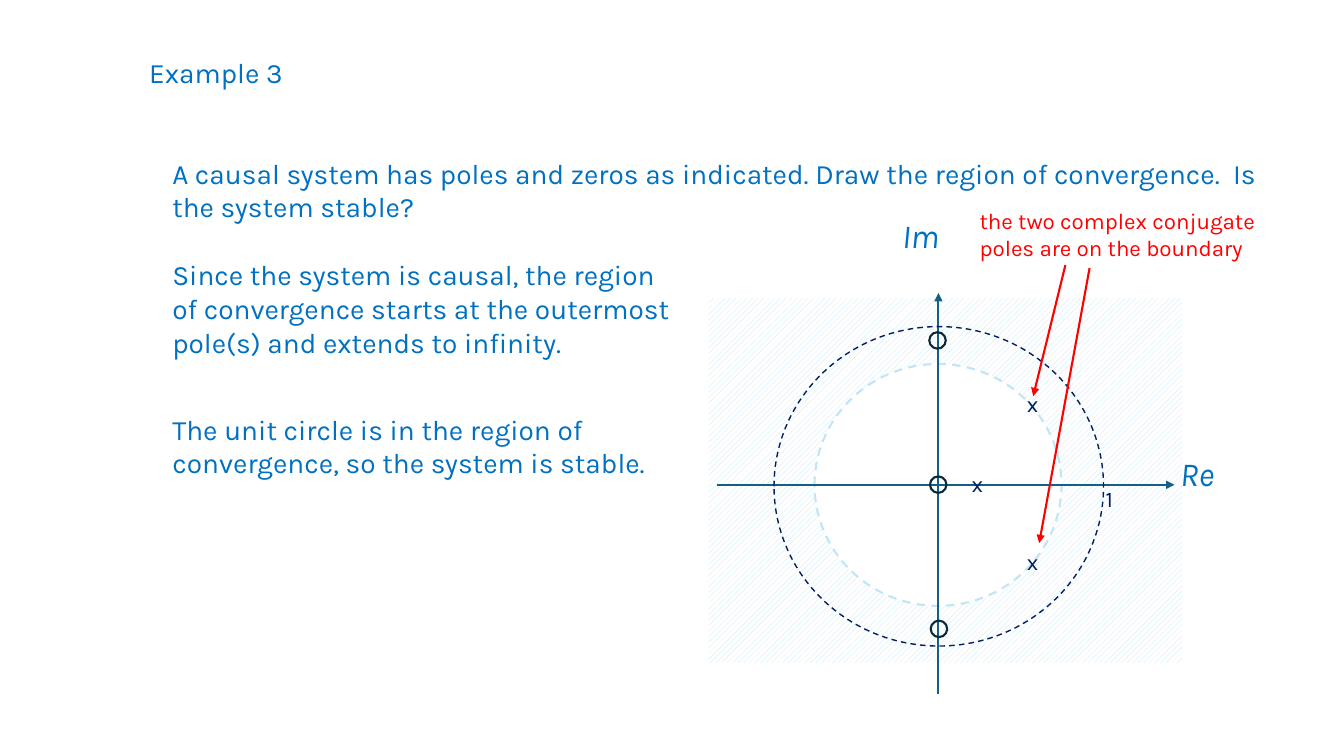
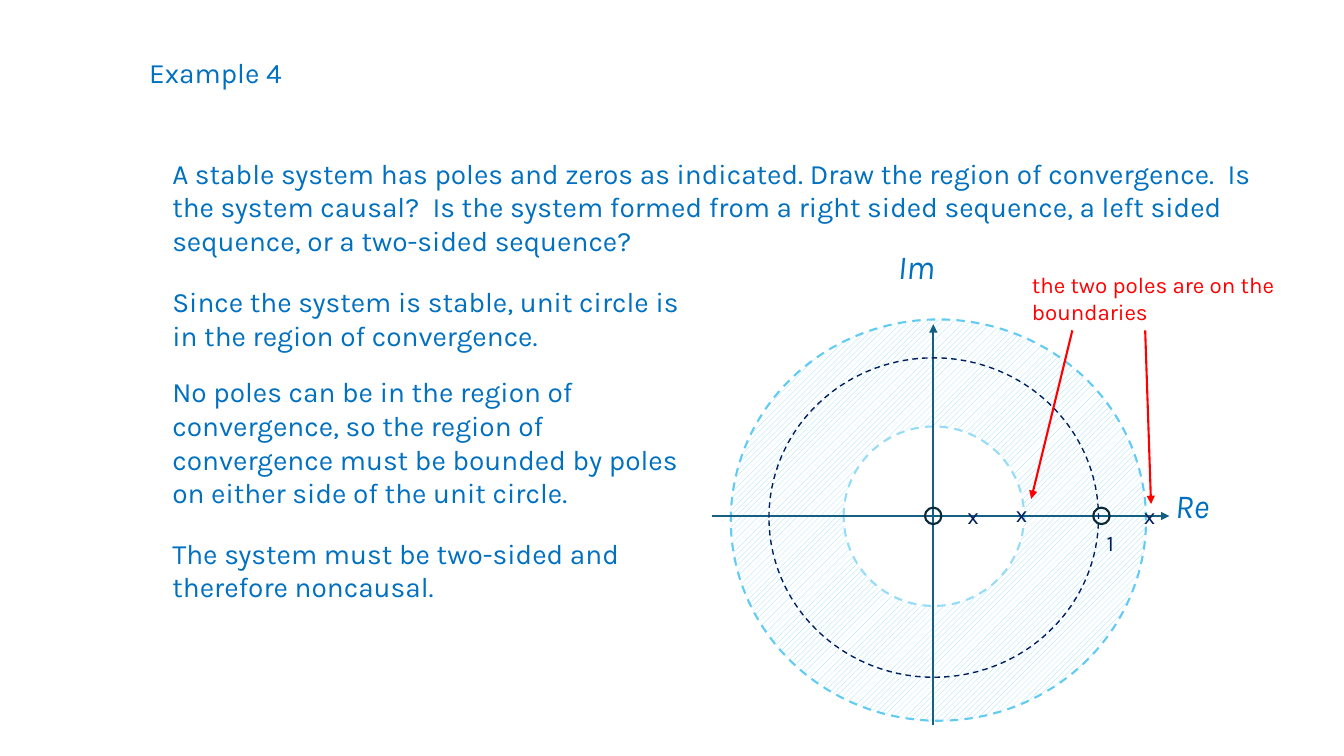
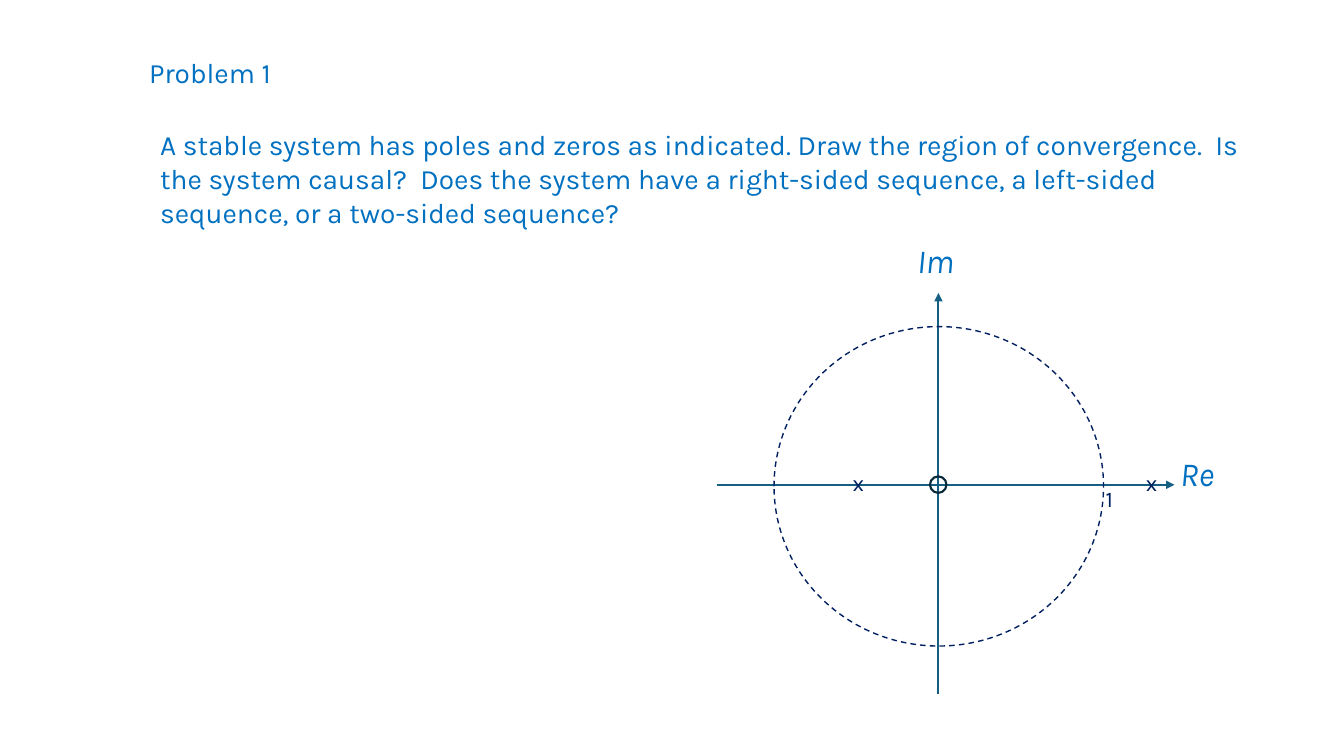
from dataclasses import dataclass
from typing import NamedTuple, Optional

from lxml.etree import SubElement
from pptx import Presentation
from pptx.dml.color import RGBColor as RGB
from pptx.enum.dml import MSO_LINE_DASH_STYLE as Dash, MSO_PATTERN_TYPE as Pattern
from pptx.enum.shapes import MSO_CONNECTOR_TYPE as Connector, MSO_SHAPE as Shape
from pptx.enum.text import MSO_AUTO_SIZE as AutoSize
from pptx.oxml.ns import qn
from pptx.slide import Slide as PptxSlide
from pptx.util import Pt


@dataclass(frozen=True)
class Theme:
    font: str = "Karla"
    white: RGB = RGB(0xFF, 0xFF, 0xFF)
    text: RGB = RGB(0x00, 0x70, 0xC0)
    navy: RGB = RGB(0x00, 0x20, 0x60)
    axis: RGB = RGB(0x15, 0x60, 0x82)
    zero: RGB = RGB(0x09, 0x2A, 0x39)
    remark: RGB = RGB(0xFF, 0x00, 0x00)
    pale: RGB = RGB(0xC1, 0xE5, 0xF5)
    light: RGB = RGB(0x96, 0xDC, 0xF8)
    sky: RGB = RGB(0x61, 0xCB, 0xF4)
    body_size: float = 20
    axis_size: float = 24
    small_size: float = 16
    thin: float = 1
    thick: float = 1.5


T = Theme()


class Point(NamedTuple):
    x: float
    y: float


class Box(NamedTuple):
    x: float
    y: float
    w: float
    h: float


class Note(NamedTuple):
    text: str
    box: Box
    size: float = T.body_size
    color: RGB = T.text


class Arrow(NamedTuple):
    start: Point
    end: Point


class Region(NamedTuple):
    shape: Shape
    box: Box
    fill: RGB
    hatched: bool = False
    line: Optional[RGB] = None


@dataclass(frozen=True)
class Plane:
    origin: Point
    im_label: Point
    one_label: Point
    poles: tuple[Point, ...]
    zeros: tuple[Point, ...]


@dataclass(frozen=True)
class Page:
    title: str
    notes: tuple[Note, ...]
    plane: Plane
    regions: tuple[Region, ...] = ()
    arrows: tuple[Arrow, ...] = ()


def apply(target: object, values: dict) -> None:
    for name, value in values.items():
        setattr(target, name, value)


def pts(*values: float) -> list:
    return [Pt(v) for v in values]


def add_text(s: PptxSlide, note: Note, italic: bool = False) -> None:
    tf = s.shapes.add_textbox(*pts(*note.box)).text_frame
    apply(tf, {"word_wrap": True, "auto_size": AutoSize.SHAPE_TO_FIT_TEXT})
    r = tf.paragraphs[0].add_run()
    r.text = note.text
    apply(r.font, {"name": T.font, "size": Pt(note.size), "italic": italic})
    r.font.color.rgb = note.color


def add_outline(s: PptxSlide, shape: Shape, box: Box, line: Optional[RGB],
                width: float = T.thick, dash: Optional[Dash] = Dash.DASH):
    sp = s.shapes.add_shape(shape, *pts(*box))
    sp.shadow.inherit = False
    sp.fill.background()
    if line is None:
        sp.line.fill.background()
    else:
        sp.line.color.rgb = line
        apply(sp.line, {"width": Pt(width), "dash_style": dash})
    return sp


def add_region(s: PptxSlide, region: Region) -> None:
    sp = add_outline(s, region.shape, region.box, region.line)
    if region.hatched:
        sp.fill.patterned()
        sp.fill.pattern = Pattern.WIDE_UPWARD_DIAGONAL
        sp.fill.fore_color.rgb = region.fill
        sp.fill.back_color.rgb = T.white
    else:
        sp.fill.solid()
        sp.fill.fore_color.rgb = region.fill


def add_arrow(s: PptxSlide, arrow: Arrow, color: RGB) -> None:
    cx = s.shapes.add_connector(Connector.STRAIGHT, *pts(*arrow.start, *arrow.end))
    cx.line.color.rgb = color
    cx.line.width = Pt(T.thick)
    SubElement(cx.line._get_or_add_ln(), qn("a:tailEnd"), type="triangle")
    SubElement(cx._element.spPr, qn("a:effectLst"))


def add_plane(s: PptxSlide, plane: Plane) -> None:
    ox, oy = plane.origin
    add_arrow(s, Arrow(Point(ox, oy + 149.5), Point(ox, oy - 137)), T.axis)
    add_arrow(s, Arrow(Point(ox - 158.4, oy), Point(ox + 168.6, oy)), T.axis)
    unit_circle = Box(ox - 117.4, oy - 113, 235.4, 228.2)
    add_outline(s, Shape.OVAL, unit_circle, T.navy, T.thin)
    for label, at in (("Re", Point(165.6, -26)), ("Im", plane.im_label)):
        box = Box(ox + at.x, oy + at.y, 72, 57.6)
        add_text(s, Note(label, box, T.axis_size), italic=True)
    one = Box(ox + plane.one_label.x, oy + plane.one_label.y, 32, 26.6)
    add_text(s, Note("1", one, T.small_size, T.navy))
    for pole in plane.poles:
        box = Box(ox + pole.x - 11, oy + pole.y - 15, 31.7, 42.5)
        add_text(s, Note("x", box, T.small_size, T.navy))
    for zero in plane.zeros:
        box = Box(ox + zero.x - 6, oy + zero.y - 6, 11.8, 11.8)
        add_outline(s, Shape.OVAL, box, T.zero, dash=None)


def statement(text: str, x: float, y: float, h: float) -> Note:
    return Note(text, Box(x, y, 808.6, h))


def answer(text: str, y: float, h: float) -> Note:
    return Note(text, Box(116, y, 381, h))


def remark(text: str, x: float, y: float) -> Note:
    return Note(text, Box(x, y, 215.3, 46), T.small_size, T.remark)


CENTER = Point(670.3, 346.3)
LOW_CENTER = Point(666.7, 368.6)

PAGES = (
    Page(
        title="Example 3",
        notes=(
            statement("A causal system has poles and zeros as indicated. Draw the region "
                      "of convergence.  Is the system stable?", 116, 108, 55.4),
            answer("Since the system is causal, the region of convergence starts at the "
                   "outermost pole(s) and extends to infinity.", 180.7, 80),
            remark("the two complex conjugate poles are on the boundary", 692.6, 144.7),
            answer("The unit circle is in the region of convergence, so the system is "
                   "stable.", 291, 55.4),
        ),
        plane=Plane(
            CENTER, Point(-33, -196.5), Point(112.3, -3.6),
            poles=(Point(27.6, 1.3), Point(67.2, -56.3), Point(67.2, 56.8)),
            zeros=(Point(0, 0), Point(-0.5, -103), Point(0.5, 103)),
        ),
        regions=(
            Region(Shape.RECTANGLE, Box(506.2, 213, 338.4, 260.6), T.pale, hatched=True),
            Region(Shape.OVAL, Box(581.8, 260, 176.4, 172.8), T.white, line=T.pale),
        ),
        arrows=(
            Arrow(Point(761, 189.4), Point(738, 283)),
            Arrow(Point(778.3, 191.5), Point(742.3, 388)),
        ),
    ),
    Page(
        title="Example 4",
        notes=(
            statement("A stable system has poles and zeros as indicated. Draw the region "
                      "of convergence.  Is the system causal?  Is the system formed from a "
                      "right sided sequence, a left sided sequence, or a two-sided "
                      "sequence?", 116, 108, 80),
            answer("Since the system is stable, unit circle is in the region of "
                   "convergence.", 199.7, 55.4),
            answer("No poles can be in the region of convergence, so the region of "
                   "convergence must be bounded by poles on either side of the unit "
                   "circle.", 264.2, 104.4),
            remark("the two poles are on the boundaries", 730, 190),
            answer("The system must be two-sided and therefore noncausal.", 379.6, 55.4),
        ),
        plane=Plane(
            LOW_CENTER, Point(-32.4, -196.5), Point(116.6, 5.8),
            poles=(Point(28.3, 1.3), Point(62.8, 0), Point(154.3, 1.3)),
            zeros=(Point(0, 0), Point(120.2, 0)),
        ),
        regions=(
            Region(Shape.OVAL, Box(522, 228.2, 296.6, 286.6), T.light, True, T.sky),
            Region(Shape.OVAL, Box(602.6, 304.6, 128.9, 128.2), T.white, line=T.light),
        ),
        arrows=(
            Arrow(Point(766, 236), Point(736.6, 356.4)),
            Arrow(Point(818, 236), Point(822.2, 360)),
        ),
    ),
    Page(
        title="Problem 1",
        notes=(
            statement("A stable system has poles and zeros as indicated. Draw the region "
                      "of convergence.  Is the system causal?  Does the system have a "
                      "right-sided sequence, a left-sided sequence, or a two-sided "
                      "sequence?", 107.3, 87.8, 80),
        ),
        plane=Plane(
            CENTER, Point(-22.3, -178.5), Point(112.3, -3.6),
            poles=(Point(-57.4, 0), Point(152.1, 0)),
            zeros=(Point(0, 0),),
        ),
    ),
)


def add_page(prs, page: Page) -> None:
    s = prs.slides.add_slide(prs.slide_layouts[6])
    for region in page.regions:
        add_region(s, region)
    add_text(s, Note(page.title, Box(99.4, 36, 148.3, 31.7)))
    add_plane(s, page.plane)
    for note in page.notes:
        add_text(s, note)
    for arrow in page.arrows:
        add_arrow(s, arrow, T.remark)


def main() -> None:
    prs = Presentation()
    apply(prs, {"slide_width": Pt(960), "slide_height": Pt(540)})
    for page in PAGES:
        add_page(prs, page)
    prs.save("out.pptx")


if __name__ == "__main__":
    main()
